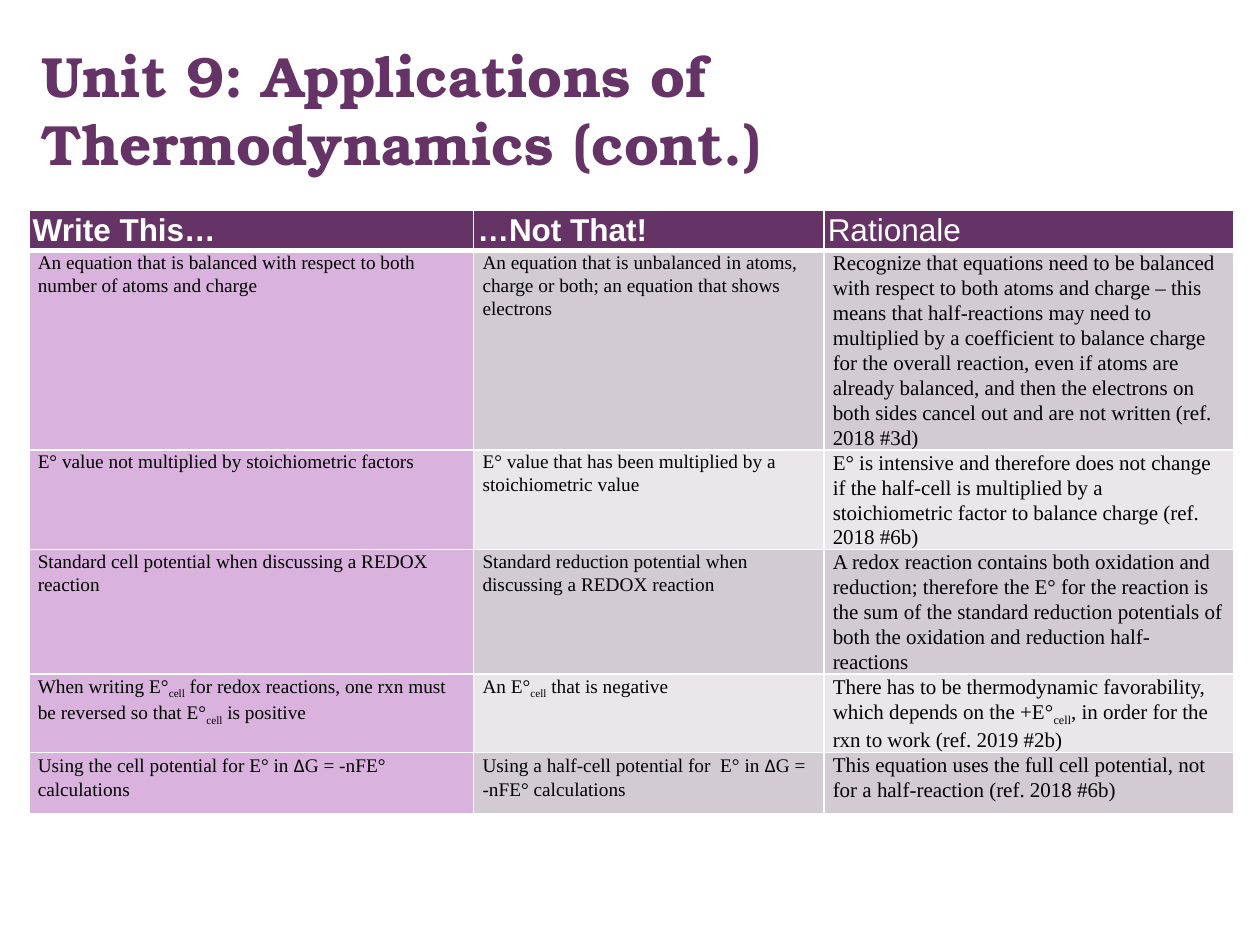
from lxml import etree
from pptx import Presentation
from pptx.dml.color import RGBColor
from pptx.enum.text import MSO_ANCHOR, MSO_AUTO_SIZE, PP_ALIGN
from pptx.oxml.ns import qn
from pptx.util import Inches, Pt

LEFT = PP_ALIGN.LEFT
TOP = MSO_ANCHOR.TOP
NO_AUTOFIT = MSO_AUTO_SIZE.NONE
TITLE_ONLY = 5

COLORS = {
    "purple": "663366",
    "lilac": "D9B2DD",
    "dark_band": "D2CCD2",
    "light_band": "EAE7EA",
    "white": "FFFFFF",
    "black": "000000",
}
TITLE_FORMAT = {"name": "TeX Gyre Bonum", "size": Pt(32.4), "bold": True}
HEADER_FORMAT = {"name": "Arial", "size": Pt(18), "bold": True}
BODY_FORMAT = {"name": "Times New Roman", "size": Pt(11), "bold": False}
COLUMN_FORMATS = [{}, {}, {"size": Pt(12)}]
HEADER_COLUMN_FORMATS = [{}, {}, {"bold": False}]
PIECE_FORMATS = {"cell": {"baseline": "-25000"}, "Δ": {"name": "Calibri"}}

COLUMN_WIDTHS = [3.53, 2.78, 3.25]
ROW_HEIGHTS = [0.32, 0.8, 0.49, 0.49, 0.59, 0.49]
HEADERS = ["Write This…", "…Not That!", "Rationale"]
ROWS = [
    [
        "An equation that is balanced with respect to both number of atoms and charge",
        "An equation that is unbalanced in atoms, charge or both; an equation that shows electrons",
        "Recognize that equations need to be balanced with respect to both atoms and charge – this "
        "means that half-reactions may need to multiplied by a coefficient to balance charge for the "
        "overall reaction, even if atoms are already balanced, and then the electrons on both sides "
        "cancel out and are not written (ref. 2018 #3d)",
    ],
    [
        "E° value not multiplied by stoichiometric factors",
        "E° value that has been multiplied by a stoichiometric value",
        "E° is intensive and therefore does not change if the half-cell is multiplied by a "
        "stoichiometric factor to balance charge (ref. 2018 #6b)",
    ],
    [
        "Standard cell potential when discussing a REDOX reaction",
        "Standard reduction potential when discussing a REDOX reaction",
        "A redox reaction contains both oxidation and reduction; therefore the E° for the reaction is "
        "the sum of the standard reduction potentials of both the oxidation and reduction half-reactions",
    ],
    [
        "When writing E°|cell| for redox reactions, one rxn must be reversed so that E°|cell| is positive",
        "An E°|cell| that is negative",
        "There has to be thermodynamic favorability, which depends on the +E°|cell|, in order for the "
        "rxn to work (ref. 2019 #2b)",
    ],
    [
        "Using the cell potential for E° in |Δ|G = -nFE° calculations",
        "Using a half-cell potential for  E° in |Δ|G = -nFE° calculations",
        "This equation uses the full cell potential, not for a half-reaction (ref. 2018 #6b)",
    ],
]


def color(name):
    return RGBColor.from_string(COLORS[name])


def set_attributes(target, values):
    for name, value in values.items():
        setattr(target, name, value)


def add_runs(paragraph, text, text_format, color_name):
    for piece in text.split("|"):
        run = paragraph.add_run()
        run.text = piece
        values = {**text_format, **PIECE_FORMATS.get(piece, {})}
        baseline = values.pop("baseline", None)
        set_attributes(run.font, values)
        run.font.color.rgb = color(color_name)
        if baseline:
            run._r.get_or_add_rPr().set("baseline", baseline)


def set_borders(cell, widths):
    properties = cell._tc.get_or_add_tcPr()
    for index, (side, width) in enumerate(widths.items()):
        line = etree.Element(qn(f"a:ln{side}"), w=str(Pt(width)))
        fill = etree.SubElement(line, qn("a:solidFill"))
        etree.SubElement(fill, qn("a:srgbClr"), val=COLORS["white"])
        properties.insert(index, line)


def fill_cell(cell, text, text_format, text_color, fill_color, margin, borders):
    set_attributes(cell, {
        "margin_left": Inches(margin), "margin_right": Inches(margin),
        "margin_top": 0, "margin_bottom": 0, "vertical_anchor": TOP,
    })
    cell.fill.solid()
    cell.fill.fore_color.rgb = color(fill_color)
    set_borders(cell, borders)
    paragraph = cell.text_frame.paragraphs[0]
    set_attributes(paragraph, {"alignment": LEFT, "line_spacing": 1.07})
    add_runs(paragraph, text, text_format, text_color)


def place_title(slide, box, text):
    title = slide.shapes.title
    set_attributes(title, dict(zip(("left", "top", "width", "height"), box)))
    set_attributes(title.text_frame, {
        "word_wrap": True, "auto_size": NO_AUTOFIT, "vertical_anchor": TOP,
        "margin_left": Inches(0.1), "margin_right": Inches(0.1),
        "margin_top": Inches(0.05), "margin_bottom": Inches(0.05),
    })
    paragraph = title.text_frame.paragraphs[0]
    paragraph.alignment = LEFT
    add_runs(paragraph, text, TITLE_FORMAT, "purple")


def place_answer_table(slide, box):
    left, top, width, height = box
    table = slide.shapes.add_table(
        len(ROW_HEIGHTS), len(COLUMN_WIDTHS), left, top, width, height
    ).table
    for column, share in zip(table.columns, COLUMN_WIDTHS):
        column.width = int(width * share / sum(COLUMN_WIDTHS))
    for row, share in zip(table.rows, ROW_HEIGHTS):
        row.height = int(height * share / sum(ROW_HEIGHTS))

    for column, text in enumerate(HEADERS):
        text_format = {**HEADER_FORMAT, **HEADER_COLUMN_FORMATS[column]}
        fill_cell(table.cell(0, column), text, text_format, "white", "purple", 0.03,
                  {"L": 1, "R": 1, "T": 1, "B": 3})

    for row, texts in enumerate(ROWS, start=1):
        band = "dark_band" if row % 2 else "light_band"
        borders = {"L": 1, "R": 1, "T": 3 if row == 1 else 1, "B": 1}
        for column, text in enumerate(texts):
            text_format = {**BODY_FORMAT, **COLUMN_FORMATS[column]}
            fill_color = band if column else "lilac"
            fill_cell(table.cell(row, column), text, text_format, "black", fill_color, 0.07, borders)


def main():
    presentation = Presentation()
    presentation.slide_width = Inches(10)
    presentation.slide_height = Inches(7.5)
    slide = presentation.slides.add_slide(presentation.slide_layouts[TITLE_ONLY])
    left = Inches(0.23)
    place_title(slide, (left, Inches(0.27), Inches(9.18), Inches(0.66)),
                "Unit 9: Applications of Thermodynamics (cont.)")
    place_answer_table(slide, (left, Inches(1.67), Inches(sum(COLUMN_WIDTHS)),
                               Inches(sum(ROW_HEIGHTS))))
    presentation.save("out.pptx")


if __name__ == "__main__":
    main()
